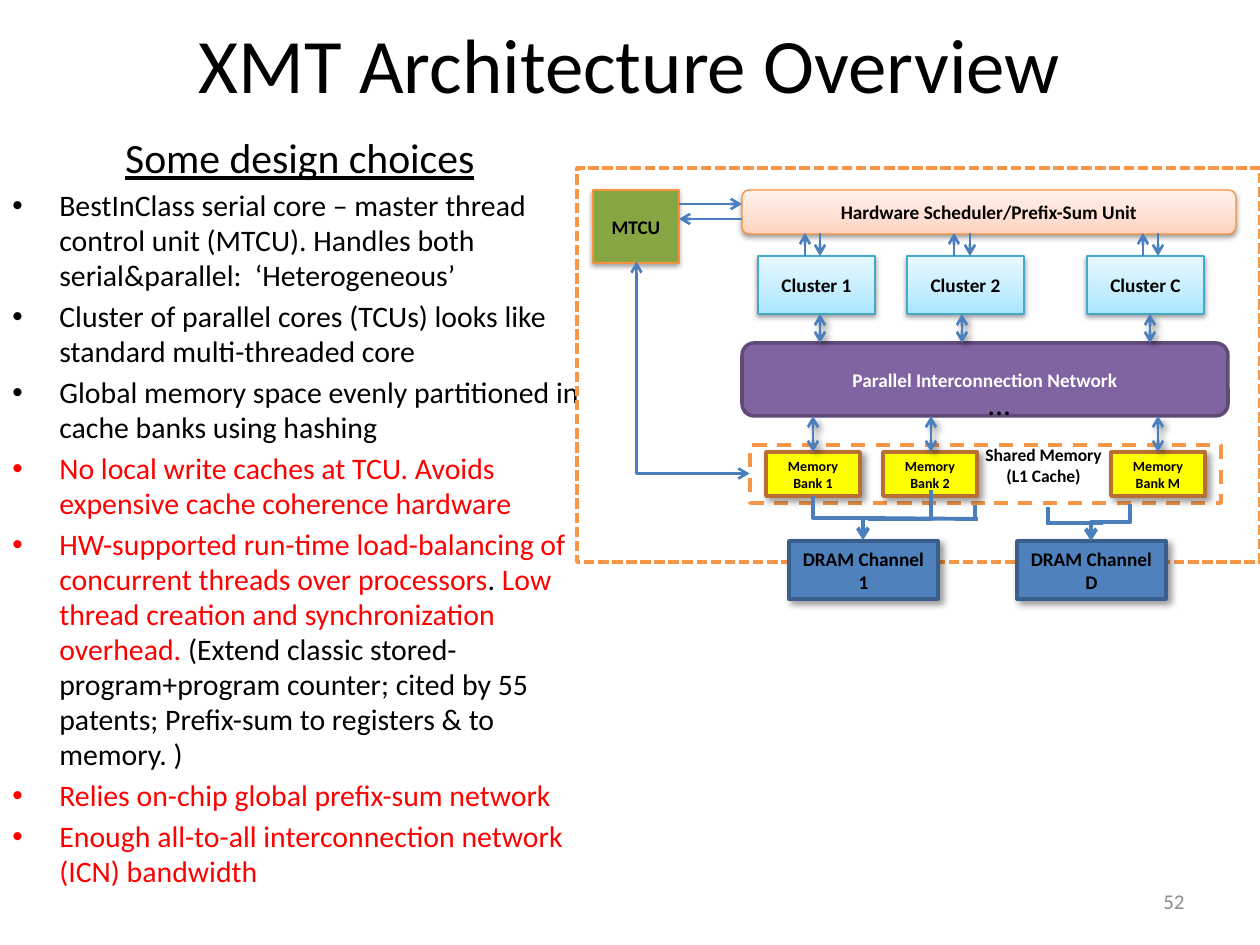
from copy import deepcopy
from dataclasses import dataclass

from lxml import etree
from pptx import Presentation
from pptx.dml.color import RGBColor
from pptx.enum.dml import MSO_LINE
from pptx.enum.shapes import MSO_CONNECTOR, MSO_SHAPE
from pptx.enum.text import MSO_ANCHOR, PP_ALIGN
from pptx.oxml.ns import qn
from pptx.util import Pt

RECT, ROUNDED = MSO_SHAPE.RECTANGLE, MSO_SHAPE.ROUNDED_RECTANGLE
STRAIGHT, ELBOW = MSO_CONNECTOR.STRAIGHT, MSO_CONNECTOR.ELBOW
DASH, DOTS = MSO_LINE.DASH, MSO_LINE.SQUARE_DOT
TOP, MIDDLE = MSO_ANCHOR.TOP, MSO_ANCHOR.MIDDLE
LEFT, CENTER, RIGHT = PP_ALIGN.LEFT, PP_ALIGN.CENTER, PP_ALIGN.RIGHT
EMU_PER_PX = 914400 / 126
FONT = "Calibri"
COLORS = {
    "black": "000000", "white": "FFFFFF", "red": "FF0000", "gray": "8C8C8C",
    "frame": "F79646", "wire": "4B7EBC", "blue": "4F81BD", "blue edge": "3A5F8C",
    "green": "86A644", "orange edge": "F69240", "purple": "8064A2",
    "purple edge": "5F4A78", "yellow": "FFFF00", "brown edge": "B76F34",
    "cyan edge": "46AAC5",
}
GRADIENTS = {
    "cyan": ("A7E6FF", "C1EDFF", "E7F8FF"),
    "peach": ("FFD2BD", "FFDED0", "FFF2ED"),
}
STOP_POSITIONS = (0, 0.35, 1)
SHADOWS = {"soft": (38, 3.1, 1.6, 90), "strong": (40, 4, 3, 45)}


@dataclass
class Style:
    fill: str
    edge: str
    weight: float
    shadow: str = ""
    size: float = 11
    ink: str = "black"
    kind: int = RECT
    dash: int | None = None


@dataclass
class Block:
    style: Style
    left: int
    top: int
    width: int
    height: int
    label: str = ""


@dataclass
class Wire:
    x1: int
    y1: int
    x2: int
    y2: int
    arrows: str = ""
    weight: float = 1.5
    shadow: str = ""
    preset: str = ""
    turn: int = 0


def px(length: int) -> int:
    return round(length * EMU_PER_PX)


def rgb(name: str) -> RGBColor:
    return RGBColor.from_string(COLORS[name])


def add_effects(properties, shadow: str) -> None:
    effects = properties.find(qn("a:effectLst"))
    if effects is None:
        effects = etree.SubElement(properties, qn("a:effectLst"))
    if shadow:
        alpha, blur, distance, angle = SHADOWS[shadow]
        outer = etree.SubElement(effects, qn("a:outerShdw"), blurRad=str(Pt(blur)),
                                 dist=str(Pt(distance)), dir=str(angle * 60000),
                                 rotWithShape="0")
        color = etree.SubElement(outer, qn("a:srgbClr"), val=COLORS["black"])
        etree.SubElement(color, qn("a:alpha"), val=str(alpha * 1000))


def fill_gradient(shape, name: str) -> None:
    shape.fill.gradient()
    shape.fill.gradient_angle = 90
    stop_list = next(shape._element.spPr.iter(qn("a:gsLst")))
    stop_list.insert(1, deepcopy(stop_list[0]))
    for stop, position, color in zip(shape.fill.gradient_stops, STOP_POSITIONS, GRADIENTS[name]):
        stop.position = position
        stop.color.rgb = RGBColor.from_string(color)


def format_span(span, size: float, color: str, bold: bool = False) -> None:
    span.font.name, span.font.size, span.font.bold = FONT, Pt(size), bold
    span.font.color.rgb = rgb(color)


def write_text(frame, text: str, size: float, color: str, align: int, bold: bool) -> None:
    frame.text = text
    for para in frame.paragraphs:
        para.alignment = align
        for span in para.runs:
            format_span(span, size, color, bold)


def draw_block(page, block: Block) -> None:
    style = block.style
    shape = page.shapes.add_shape(style.kind, px(block.left), px(block.top),
                                  px(block.width), px(block.height))
    shape.shadow.inherit = False
    if style.fill in GRADIENTS:
        fill_gradient(shape, style.fill)
    elif style.fill:
        shape.fill.solid()
        shape.fill.fore_color.rgb = rgb(style.fill)
    else:
        shape.fill.background()
    shape.line.color.rgb = rgb(style.edge)
    shape.line.width = Pt(style.weight)
    if style.dash:
        shape.line.dash_style = style.dash
    add_effects(shape._element.spPr, style.shadow)
    if block.label:
        shape.text_frame.vertical_anchor = MIDDLE
        write_text(shape.text_frame, block.label, style.size, style.ink, CENTER, True)


def draw_wire(page, wire: Wire) -> None:
    connector = page.shapes.add_connector(ELBOW if wire.preset else STRAIGHT, px(wire.x1),
                                          px(wire.y1), px(wire.x2), px(wire.y2))
    connector.line.color.rgb = rgb("wire")
    connector.line.width = Pt(wire.weight)
    properties = connector._element.spPr
    if wire.preset:
        properties.find(qn("a:prstGeom")).set("prst", wire.preset)
        properties.find(qn("a:xfrm")).set("rot", str(wire.turn * 60000))
    for end in wire.arrows.split():
        etree.SubElement(properties.find(qn("a:ln")), qn(f"a:{end}End"), type="arrow")
    add_effects(properties, wire.shadow)


def add_text(page, left: int, top: int, width: int, height: int, text: str, size: float,
             color: str = "black", align: int = CENTER, anchor: int = TOP,
             bold: bool = False, wrap: bool = True):
    box = page.shapes.add_textbox(px(left), px(top), px(width), px(height))
    box.text_frame.word_wrap = wrap
    box.text_frame.vertical_anchor = anchor
    write_text(box.text_frame, text, size, color, align, bold)
    return box


def add_choices(page, choices: list[list[tuple[str, str]]]) -> None:
    box = add_text(page, 0, 126, 593, 718, "Some design choices", 23.8)
    frame = box.text_frame
    frame.margin_right = px(6)
    frame.paragraphs[0].runs[0].font.underline = True
    for choice in choices:
        para = frame.add_paragraph()
        para.space_before = Pt(3.4)
        para.line_spacing = 0.98
        properties = para._p.get_or_add_pPr()
        properties.set("marL", str(px(47)))
        properties.set("indent", str(-px(47)))
        etree.SubElement(properties, qn("a:buFont"), typeface="Arial")
        etree.SubElement(properties, qn("a:buChar"), char="•")
        for text, color in choice:
            span = para.add_run()
            span.text = text
            format_span(span, 17, color)


CLUSTER = Style("cyan", "cyan edge", 0.75, "soft")
DRAM = Style("blue", "blue edge", 2, "strong")
BANK = Style("yellow", "brown edge", 2, "strong", size=8)
CONTROL = Style("green", "orange edge", 0.75, "soft")
SCHEDULER = Style("peach", "orange edge", 0.75, "soft", kind=ROUNDED)
NETWORK = Style("purple", "purple edge", 2, ink="white", kind=ROUNDED)

BLOCKS = [
    Block(Style("", "frame", 2, dash=DASH), 750, 445, 471, 58),
    Block(Style("", "frame", 2, dash=DOTS), 577, 168, 683, 394),
    *[Block(CLUSTER, x, 256, 117, 58, f"Cluster {n}") for x, n in ((758, 1), (907, 2), (1087, "C"))],
    *[Block(DRAM, x, 541, 149, 58, f"DRAM Channel {n}") for x, n in ((789, 1), (1017, "D"))],
    Block(CONTROL, 593, 190, 86, 73, "MTCU"),
    Block(SCHEDULER, 742, 190, 494, 44, "Hardware Scheduler/Prefix-Sum Unit"),
    Block(NETWORK, 742, 343, 486, 73, "Parallel Interconnection Network"),
    *[Block(BANK, x, 452, 94, 44, f"Memory Bank {n}") for x, n in ((766, 1), (883, 2), (1111, "M"))],
]
BOTH = "head tail"
WIRES = [
    Wire(860, 493, 816, 543, "tail", 2.25, preset="bentConnector3", turn=270),
    Wire(859, 518, 978, 519, weight=2.25),
    Wire(1092, 503, 1129, 542, "tail", 2.25, preset="bentConnector3", turn=90),
    Wire(1103, 523, 1048, 523, weight=2.25),
    Wire(1048, 525, 1048, 507, weight=2.25),
    Wire(975, 519, 975, 505, weight=2.25),
    Wire(885, 473, 914, 536, weight=2.25, preset="bentConnector2", turn=90),
    Wire(799, 311, 587, 424, BOTH, preset="bentConnector2", turn=270),
    Wire(679, 204, 742, 204, "tail"),
    Wire(679, 219, 742, 219, "head"),
    *[Wire(x, 233, x, 256, "tail") for x in (820, 970, 1158)],
    *[Wire(x, 256, x, 233, "tail") for x in (805, 954, 1143)],
    *[Wire(x, 314, x, 343, BOTH, shadow="strong") for x in (820, 962, 1150)],
    *[Wire(x, 416, x, 452, BOTH, shadow="strong") for x in (813, 931, 1158)],
]
CHOICES = [
    [("BestInClass serial core – master thread control unit (MTCU). Handles both "
      "serial&parallel:  ‘Heterogeneous’", "black")],
    [("Cluster of parallel cores (TCUs) looks like standard multi-threaded core", "black")],
    [("Global memory space evenly partitioned in cache banks using hashing", "black")],
    [("No local write caches at TCU. Avoids expensive cache coherence hardware", "red")],
    [("HW-supported run-time load-balancing of concurrent threads over processors", "red"),
     (". ", "black"), ("Low thread creation and synchronization overhead.", "red"),
     (" (Extend classic stored-program+program counter; cited by 55 patents; "
      "Prefix-sum to registers & to memory. )", "black")],
    [("Relies on-chip global prefix-sum network", "red")],
    [("Enough all-to-all interconnection network (ICN) bandwidth", "red")],
]


def main() -> None:
    deck = Presentation()
    deck.slide_width, deck.slide_height = px(1260), px(945)
    page = deck.slides.add_slide(deck.slide_layouts[6])
    add_text(page, 63, 0, 1134, 126, "XMT Architecture Overview", 44, anchor=MIDDLE)
    add_choices(page, CHOICES)
    for block in BLOCKS:
        draw_block(page, block)
    for wire in WIRES:
        draw_wire(page, wire)
    add_text(page, 969, 438, 149, 55, "Shared Memory\n(L1 Cache)", 10, bold=True)
    add_text(page, 976, 378, 60, 55, "…", 18, align=LEFT, wrap=False)
    add_text(page, 903, 876, 294, 50, "52", 12, "gray", RIGHT, MIDDLE)
    deck.save("out.pptx")


if __name__ == "__main__":
    main()
